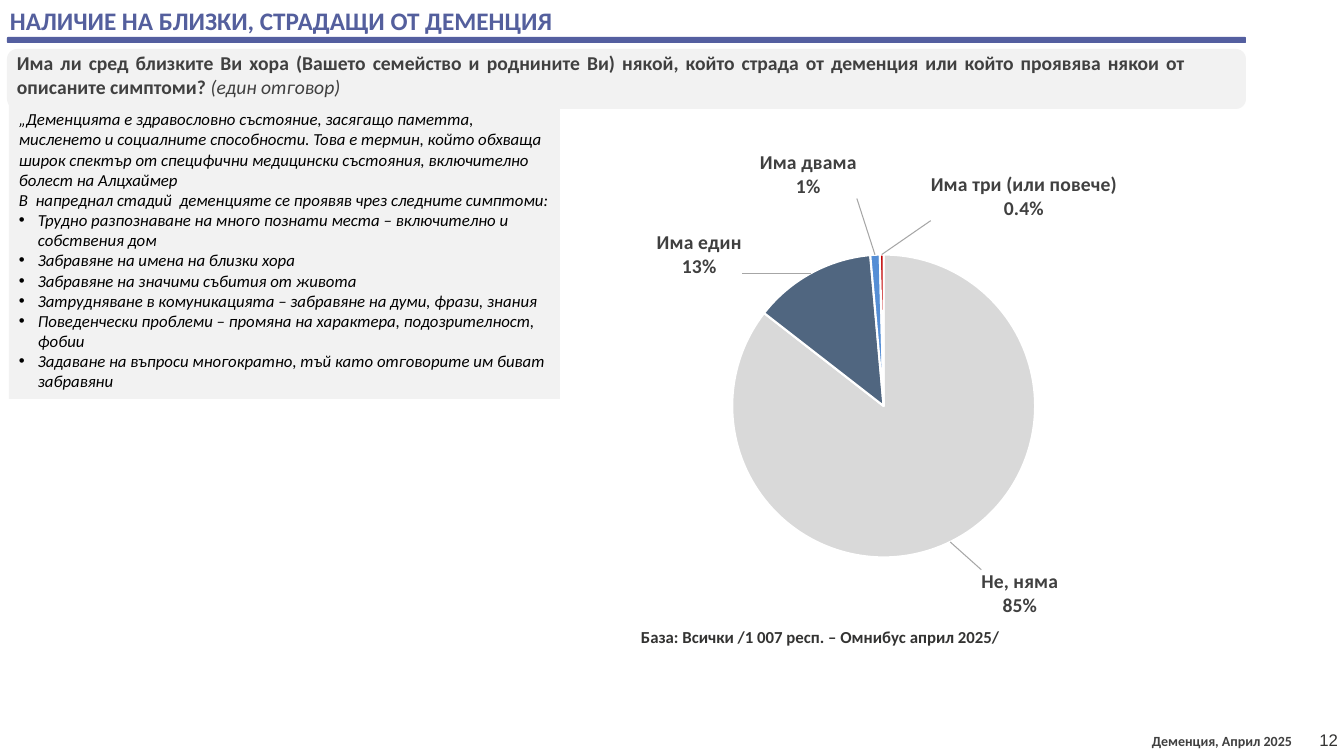
import copy
from dataclasses import dataclass

import pptx
import pptx.chart.data
import pptx.dml.color
import pptx.enum.chart
import pptx.enum.shapes
import pptx.enum.text
import pptx.oxml
import pptx.oxml.ns
import pptx.util

HEADING = "НАЛИЧИЕ НА БЛИЗКИ, СТРАДАЩИ ОТ ДЕМЕНЦИЯ"
QUESTION = ("Има ли сред близките Ви хора (Вашето семейство и роднините Ви) някой, "
            "който страда от деменция или който проявява някои от описаните симптоми? ")
QUESTION_HINT = "(един отговор)"
DEFINITION = [
    "„Деменцията е здравословно състояние, засягащо паметта, мисленето и социалните "
    "способности. Това е термин, който обхваща широк спектър от специфични медицински "
    "състояния, включително болест на Алцхаймер",
    "В \u00a0напреднал стадий\u00a0 деменцияте се проявяв чрез следните симптоми:",
]
SYMPTOMS = [
    "Трудно разпознаване на много познати места – включително и собствения дом",
    "Забравяне на имена на близки хора",
    "Забравяне на значими събития от живота",
    "Затрудняване в комуникацията – забравяне на думи, фрази, знания",
    "Поведенчески проблеми – промяна на характера, подозрителност, фобии",
    "Задаване на въпроси многократно, тъй като отговорите им биват забравяни",
]
# answer, share, number format, fill, label shift as a fraction of the chart
ANSWERS = [
    ("Не, няма", 0.85, "0%", "D9D9D9", (0.03, 0.04)),
    ("Има един", 0.13, "0%", "254061", (-0.07, 0.02)),
    ("Има двама", 0.01, "0%", "558ED5", (-0.07, -0.09)),
    ("Има три (или повече)", 0.004, "0.0%", "C00000", (0.15, -0.05)),
]
TRANSLUCENT_ANSWER, OPACITY = 1, 80
BASE = "База: Всички /1 007 респ. – Омнибус април 2025/"
FOOTER = "Деменция, Април 2025"
PAGE = "12"


@dataclass(frozen=True)
class Theme:
    font: str = "Calibri"
    page_font: str = "Arial"
    bar: str = "545FA0"
    heading: str = "545F9D"
    panel: str = "F2F2F2"
    text: str = "404040"
    body: str = "000000"
    dark: str = "333332"
    white: str = "FFFFFF"
    leader: str = "A6A6A6"
    heading_size: int = 18
    label_size: int = 14
    body_size: int = 12
    footer_size: int = 10


THEME = Theme()
EMU_PER_PX = 914400 / 100.8
BULLET_INDENT = 19
qn = pptx.oxml.ns.qn
ALIGN = pptx.enum.text.PP_ALIGN


def px(length):
    return pptx.util.Emu(round(length * EMU_PER_PX))


def rgb(value):
    return pptx.dml.color.RGBColor.from_string(value)


def xml(prefix, body):
    """Parse one element whose opening tag is completed with its namespaces."""
    tag, rest = body.split(">", 1)
    slash = "/" if tag.endswith("/") else ""
    return pptx.oxml.parse_xml(
        f"{tag.rstrip('/')} {pptx.oxml.ns.nsdecls(*prefix)}{slash}>{rest}")


def style(font, size, color, bold=False, italic=False, name=THEME.font):
    font.name, font.size = name, pptx.util.Pt(size)
    font.bold, font.italic = bold, italic
    font.color.rgb = rgb(color)


def add_panel(slide, kind, box, fill):
    panel = slide.shapes.add_shape(kind, *map(px, box))
    panel.shadow.inherit = False
    panel.fill.solid()
    panel.fill.fore_color.rgb = rgb(fill)
    panel.line.fill.background()
    return panel


def add_text(slide, box, text, align=ALIGN.LEFT, **look):
    frame = slide.shapes.add_textbox(*map(px, box)).text_frame
    frame.word_wrap = True
    line = frame.paragraphs[0]
    line.text, line.alignment = text, align
    style(line.runs[0].font, **look)
    return line


def add_definition(slide):
    panel = add_panel(slide, pptx.enum.shapes.MSO_SHAPE.RECTANGLE, (9, 104, 551, 295), THEME.panel)
    frame = panel.text_frame
    frame.word_wrap = True
    frame.vertical_anchor = pptx.enum.text.MSO_ANCHOR.TOP
    frame.text = "\n".join(DEFINITION + SYMPTOMS)
    for position, line in enumerate(frame.paragraphs):
        line.alignment = ALIGN.LEFT
        if position >= len(DEFINITION):
            properties = line._p.get_or_add_pPr()
            properties.set("marL", str(px(BULLET_INDENT)))
            properties.set("indent", str(-px(BULLET_INDENT)))
            properties.append(xml("a", '<a:buFont typeface="Arial"/>'))
            properties.append(xml("a", '<a:buChar char="•"/>'))
        style(line.runs[0].font, THEME.body_size, THEME.body, italic=True)


def layout(**values):
    """Manual chart layout; the keys are c:manualLayout children in order."""
    parts = "".join(f'<c:{key} val="{value}"/>' for key, value in values.items())
    return xml("c", f"<c:layout><c:manualLayout>{parts}</c:manualLayout></c:layout>")


def set_layout(parent, position, new):
    for old in parent.findall(qn("c:layout")):
        parent.remove(old)
    parent.insert(position, new)


def place_labels(series):
    labels = series.data_labels
    labels.show_value = labels.show_category_name = True
    labels.show_percentage = False
    labels.number_format, labels.number_format_is_linked = "0%", False
    labels.position = pptx.enum.chart.XL_LABEL_POSITION.OUTSIDE_END
    style(labels.font, THEME.label_size, THEME.text, bold=True)
    root = labels._element
    text_look = root.find(qn("c:txPr"))
    for index, (_, _, number_format, _, (dx, dy)) in enumerate(ANSWERS):
        label = xml("c", f"""<c:dLbl><c:idx val="{index}"/>
            <c:numFmt formatCode="{number_format}" sourceLinked="0"/>
            <c:dLblPos val="bestFit"/><c:showLegendKey val="0"/><c:showVal val="1"/>
            <c:showCatName val="1"/><c:showSerName val="0"/><c:showPercent val="0"/>
            <c:showBubbleSize val="0"/><c:separator>\n</c:separator></c:dLbl>""")
        label.insert(1, layout(x=dx, y=dy))
        label.insert(3, copy.deepcopy(text_look))
        root.insert(index, label)
    for old in root.findall(qn("c:showLeaderLines")):
        root.remove(old)
    root.append(xml("c", "<c:separator>\n</c:separator>"))
    root.append(xml("c", '<c:showLeaderLines val="1"/>'))
    root.append(xml("ca", f"""<c:leaderLines><c:spPr><a:ln w="9525"><a:solidFill>
        <a:srgbClr val="{THEME.leader}"/></a:solidFill></a:ln></c:spPr></c:leaderLines>"""))


def add_pie(slide):
    data = pptx.chart.data.CategoryChartData(number_format="0%")
    data.categories = [answer[0] for answer in ANSWERS]
    data.add_series("Series 1", [answer[1] for answer in ANSWERS])
    chart = slide.shapes.add_chart(pptx.enum.chart.XL_CHART_TYPE.PIE,
                                   *map(px, (395, 137, 949, 560)), data).chart
    style(chart.font, THEME.footer_size, THEME.body, name=THEME.page_font)
    chart.has_legend = False
    chart.has_title = True
    chart.chart_title.text_frame.text = BASE
    style(chart.chart_title.text_frame.paragraphs[0].runs[0].font,
          THEME.body_size, THEME.dark, bold=True)
    chart.chart_title.include_in_layout = False
    set_layout(chart.chart_title._element, 1,
               layout(xMode="edge", yMode="edge", x=0.256, y=0.868))
    set_layout(chart._chartSpace.chart.plotArea, 0,
               layout(layoutTarget="inner", xMode="edge", yMode="edge",
                      x=0.355, y=0.21, w=0.32, h=0.541))
    pie = chart.plots[0]
    pie.vary_by_categories = True
    series = pie.series[0]
    for index, answer in enumerate(ANSWERS):
        look = series.points[index].format
        look.fill.solid()
        look.fill.fore_color.rgb = rgb(answer[3])
        look.line.color.rgb = rgb(THEME.white)
        look.line.width = pptx.util.Pt(1.5)
        if index == TRANSLUCENT_ANSWER:
            color = next(look.fill._xPr.iter(qn("a:srgbClr")))
            color.append(xml("a", f'<a:alpha val="{OPACITY * 1000}"/>'))
    place_labels(series)


def main():
    deck = pptx.Presentation()
    deck.slide_width, deck.slide_height = px(1344), px(756)
    slide = deck.slides.add_slide(deck.slide_layouts[6])
    rounded = pptx.enum.shapes.MSO_SHAPE.ROUNDED_RECTANGLE
    add_panel(slide, rounded, (7, 37, 1239, 6), THEME.bar)
    add_panel(slide, rounded, (7, 49, 1239, 60), THEME.panel)
    add_text(slide, (1142, 728, 172, 27), FOOTER,
             size=THEME.footer_size, color=THEME.text, bold=True)
    add_text(slide, (1063, 725, 285, 28), PAGE, ALIGN.RIGHT,
             size=THEME.body_size, color=THEME.dark, name=THEME.page_font)
    question = add_text(slide, (7, 46, 1189, 58), QUESTION, ALIGN.JUSTIFY,
                        size=THEME.label_size, color=THEME.text, bold=True)
    hint = question.add_run()
    hint.text = QUESTION_HINT
    style(hint.font, THEME.label_size, THEME.text, italic=True)
    add_text(slide, (0, 0, 1189, 40), HEADING,
             size=THEME.heading_size, color=THEME.heading, bold=True)
    add_pie(slide)
    add_definition(slide)
    deck.save("out.pptx")


if __name__ == "__main__":
    main()
